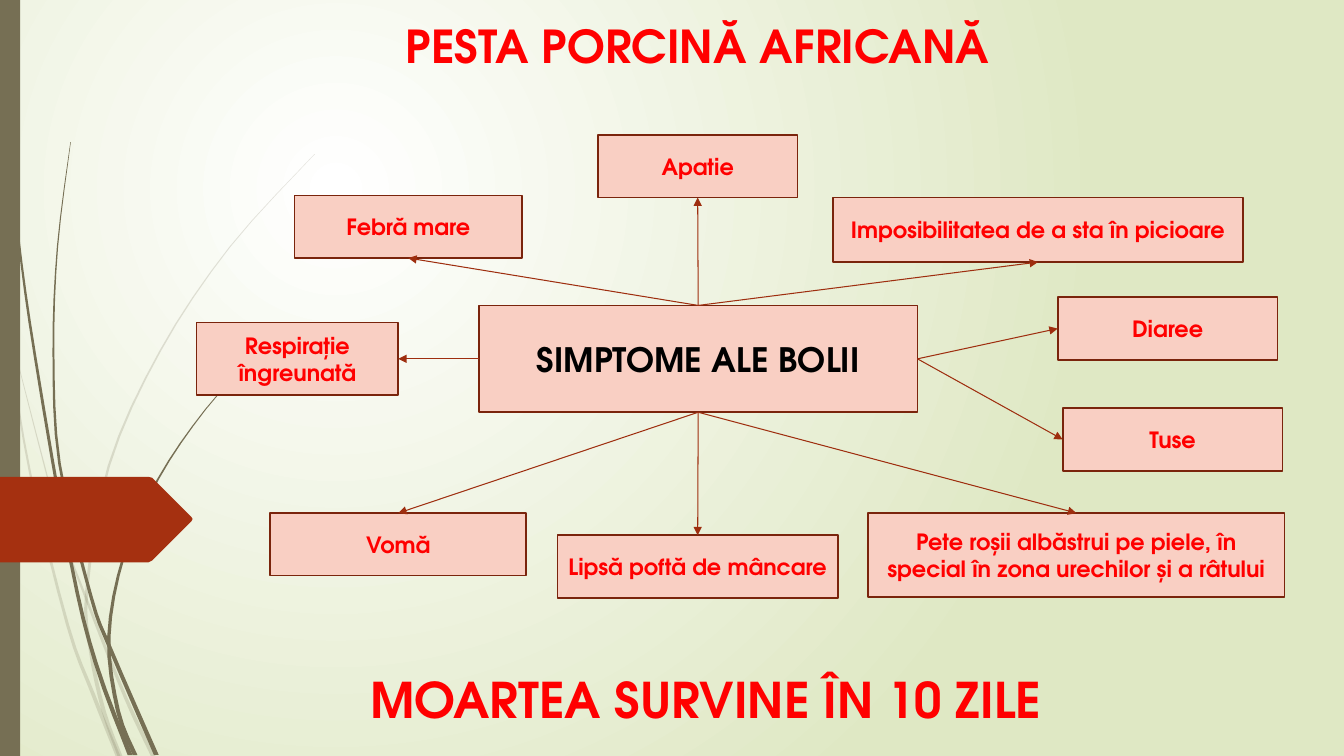
from lxml.etree import SubElement
from pptx import Presentation
from pptx.dml.color import RGBColor
from pptx.enum.shapes import MSO_CONNECTOR, MSO_SHAPE
from pptx.enum.text import MSO_ANCHOR, MSO_AUTO_SIZE, PP_ALIGN
from pptx.oxml.ns import qn
from pptx.util import Inches, Pt

COLORS = {"glow": "FFFFFF", "meadow": "DFE8C4", "stem": "766F54", "ribbon": "A53010",
          "box": "F9CFC3", "border": "7A240C", "arrow": "9E2E0F",
          "alert": "FF0000", "ink": "000000"}
FONT = "TeX Gyre Adventor"
TOP, LEFT, BOTTOM, RIGHT = range(4)

# Centre lines of the grass blades, from tip to root.
PALE_GRASS = [
    [(0, 2.9), (0.1, 3.5), (0.3, 4.7), (0.67, 6.2), (0.92, 6.88), (1.17, 7.5)],
    [(0.14, 3.45), (0.6, 5.21), (0.86, 5.95), (1.25, 6.93), (1.52, 7.5)],
    [(3.12, 1.53), (2.28, 2.45), (1.59, 3.48), (1.08, 4.62), (0.86, 5.86),
     (0.9, 6.46), (1.03, 7.06), (1.19, 7.5)],
]
DARK_GRASS = [
    [(0.04, 0), (0.07, 1.1), (0.18, 2.33), (0.35, 3.55), (0.7, 5.56), (0.95, 6.58), (1.29, 7.49)],
    [(0.7, 1.41), (0.57, 2.45), (0.53, 3.49), (0.59, 4.6), (0.9, 5.91), (1.1, 6.45), (1.55, 7.49)],
    [(2.6, 3.44), (2.04, 4.06), (1.57, 4.75), (1.23, 5.51), (1.08, 6.32), (1.17, 7.05), (1.34, 7.49)],
]
RIBBON = [(0, 4.73), (1.47, 4.73), (1.51, 4.74), (1.9, 5.13), (1.91, 5.15),
          (1.9, 5.17), (1.51, 5.56), (1.47, 5.58), (0, 5.58)]

# Text, box (left, top, width, height), side of the centre box, side of the symptom box.
SYMPTOMS = [
    ("Respirație îngreunată", (1.95, 3.2, 2, 0.72), LEFT, RIGHT),
    ("Apatie", (5.93, 1.34, 1.98, 0.62), TOP, BOTTOM),
    ("Imposibilitatea de a sta în picioare", (8.26, 1.96, 4.07, 0.64), TOP, BOTTOM),
    ("Vomă", (2.68, 5.09, 2.54, 0.62), BOTTOM, TOP),
    ("Lipsă poftă de mâncare", (5.53, 5.31, 2.78, 0.62), BOTTOM, TOP),
    ("Diaree", (10.49, 2.95, 2.18, 0.62), RIGHT, LEFT),
    ("Febră mare", (2.92, 1.94, 2.26, 0.62), TOP, BOTTOM),
    ("Pete roșii albăstrui pe piele, în special în zona urechilor și a râtului",
     (8.61, 5.09, 4.13, 0.83), BOTTOM, TOP),
    ("Tuse", (10.54, 4.05, 2.18, 0.62), RIGHT, LEFT),
]


def rgb(name):
    return RGBColor.from_string(COLORS[name])


def smooth(knots, steps=4):
    """Return points on a Catmull-Rom curve through the knots."""
    padded = [knots[0], *knots, knots[-1]]
    points = [knots[0]]
    for window in zip(padded, padded[1:], padded[2:], padded[3:]):
        for t in (step / steps for step in range(1, steps + 1)):
            points.append(tuple(
                b + t * (c - a) / 2 + t * t * (a - 2.5 * b + 2 * c - d / 2)
                + t ** 3 * (1.5 * (b - c) + (d - a) / 2)
                for a, b, c, d in zip(*window)))
    return points


def taper(centre_line, root_width=0.05):
    """Return the outline of a blade that widens from its tip to its root."""
    points = smooth(centre_line)
    halves = [root_width / 2 * (0.1 + 0.9 * i / len(points)) for i in range(len(points))]
    left = [(x - half, y) for (x, y), half in zip(points, halves)]
    right = [(x + half, y) for (x, y), half in zip(points, halves)]
    return left + right[::-1]


def write(frame, text, size=16, color="alert", anchor=MSO_ANCHOR.MIDDLE):
    frame.word_wrap = True
    frame.auto_size = MSO_AUTO_SIZE.NONE
    frame.vertical_anchor = anchor
    paragraph = frame.paragraphs[0]
    paragraph.alignment = PP_ALIGN.CENTER
    run = paragraph.add_run()
    run.text = text
    run.font.name, run.font.size, run.font.bold = FONT, Pt(size), True
    run.font.color.rgb = rgb(color)


class Board:
    def __init__(self, slide):
        self.slide = slide
        self.shapes = slide.shapes

    def background(self):
        fill = self.slide.background.fill
        fill.gradient()
        for stop, color in zip(fill.gradient_stops, ("glow", "meadow")):
            stop.color.rgb = rgb(color)
        gradient = self.slide.element.find(".//" + qn("a:gradFill"))
        gradient.remove(gradient.find(qn("a:lin")))
        circle = SubElement(gradient, qn("a:path"), path="circle")
        SubElement(circle, qn("a:fillToRect"), l="50000", t="50000", r="100000", b="100000")

    def paint(self, shape, color, border=None):
        shape.shadow.inherit = False
        shape.fill.solid()
        shape.fill.fore_color.rgb = rgb(color)
        if border:
            shape.line.color.rgb, shape.line.width = rgb(border), Pt(1.25)
        else:
            shape.line.fill.background()
        return shape

    def outline(self, points, color):
        start, *rest = [(Inches(x), Inches(y)) for x, y in points]
        builder = self.shapes.build_freeform(*start)
        builder.add_line_segments(rest, close=True)
        return self.paint(builder.convert_to_shape(), color)

    def grass(self, blades, opacity=100):
        for centre_line in blades:
            blade = self.outline(taper(centre_line), "stem")
            if opacity < 100:
                tint = blade.element.spPr.find(qn("a:solidFill"))[0]
                SubElement(tint, qn("a:alpha"), val=str(opacity * 1000))

    def rectangle(self, box, color, border=None):
        shape = self.shapes.add_shape(MSO_SHAPE.RECTANGLE, *map(Inches, box))
        return self.paint(shape, color, border)

    def label(self, text, box, **style):
        shape = self.rectangle(box, "box", "border")
        write(shape.text_frame, text, **style)
        return shape

    def arrow(self, source, source_side, target, target_side):
        link = self.shapes.add_connector(MSO_CONNECTOR.STRAIGHT, 0, 0, 0, 0)
        link.begin_connect(source, source_side)
        link.end_connect(target, target_side)
        link.line.color.rgb, link.line.width = rgb("arrow"), Pt(0.75)
        properties = link.element.spPr
        SubElement(properties.find(qn("a:ln")), qn("a:tailEnd"), type="triangle")
        SubElement(properties, qn("a:effectLst"))

    def title(self, text, box, size):
        title = self.shapes.title
        title.left, title.top, title.width, title.height = map(Inches, box)
        title.text_frame.margin_bottom = Inches(0.6)
        write(title.text_frame, text, size=size, anchor=MSO_ANCHOR.BOTTOM)

    def caption(self, text, box, size):
        caption = self.shapes.add_textbox(*map(Inches, box))
        write(caption.text_frame, text, size=size, anchor=MSO_ANCHOR.BOTTOM)


def main():
    deck = Presentation()
    deck.slide_width, deck.slide_height = Inches(13.33), Inches(7.5)
    board = Board(deck.slides.add_slide(deck.slide_layouts[5]))
    board.background()
    board.grass(PALE_GRASS, opacity=20)
    board.grass(DARK_GRASS)
    board.rectangle((0, 0, 0.2, 7.5), "stem")
    board.outline(RIBBON, "ribbon")
    board.title("PESTA PORCINĂ AFRICANĂ", (2.76, 0.08, 8.32, 1.24), 32.4)
    disease = board.label("SIMPTOME ALE BOLII", (4.75, 3.03, 4.35, 1.06), size=24, color="ink")
    symptoms = [board.label(text, box) for text, box, _, _ in SYMPTOMS]
    for symptom, (_, _, start, end) in zip(symptoms, SYMPTOMS):
        board.arrow(disease, start, symptom, end)
    board.caption("MOARTEA SURVINE ÎN 10 ZILE", (2.84, 6.48, 8.32, 0.79), 35.1)
    deck.save("out.pptx")


if __name__ == "__main__":
    main()
